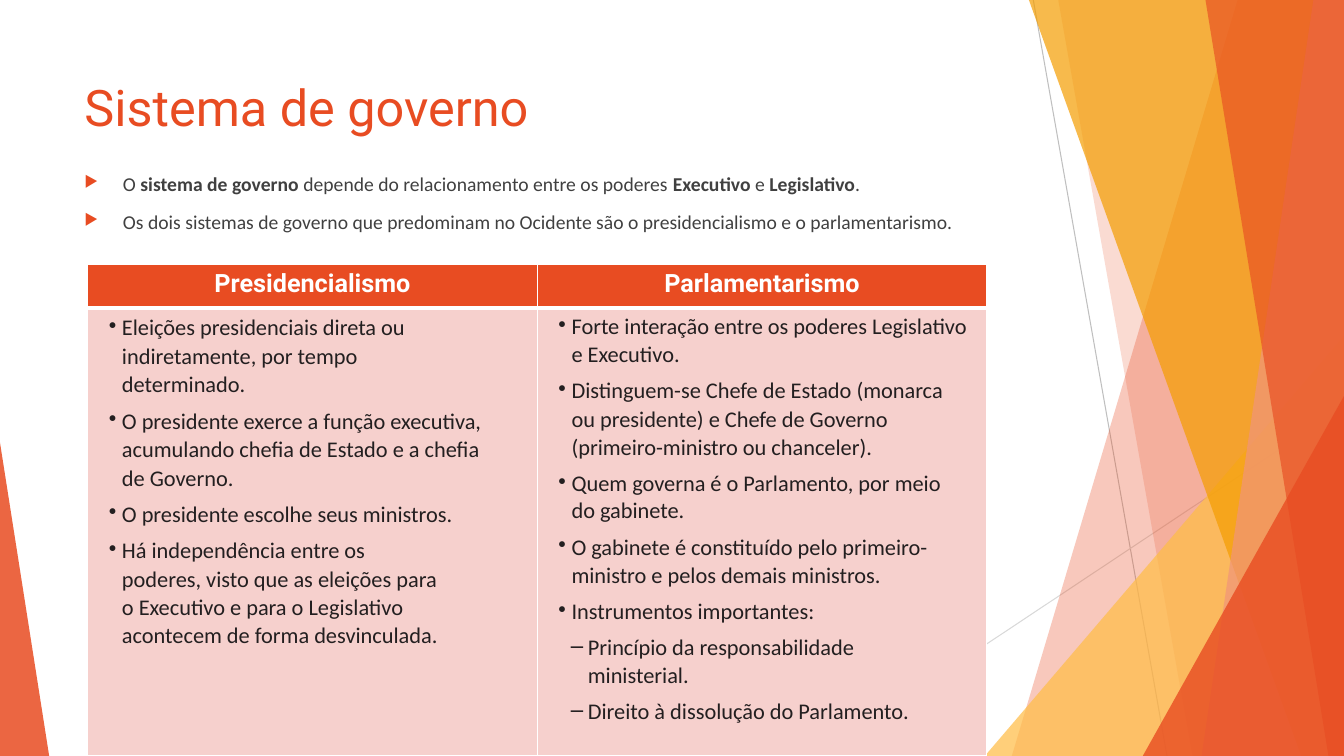
from dataclasses import dataclass

from lxml.etree import SubElement
from pptx import Presentation
from pptx.dml.color import RGBColor
from pptx.enum.shapes import MSO_CONNECTOR, MSO_SHAPE
from pptx.enum.text import MSO_ANCHOR, PP_ALIGN
from pptx.oxml import parse_xml
from pptx.oxml.ns import nsdecls, qn
from pptx.util import Cm, Pt

WIDTH, HEIGHT = 33.87, 19.05


@dataclass(frozen=True)
class Theme:
    accent: str = "E84C22"
    salmon: str = "F1947A"
    amber: str = "F49D00"
    yellow: str = "FFBD47"
    body: str = "404040"
    ink: str = "231F20"
    white: str = "FFFFFF"
    cell: str = "F6D0CD"
    heading_font: str = "Roboto"
    text_font: str = "Calibri"
    title_size: int = 36
    intro_size: int = 14
    header_size: int = 18
    cell_size: int = 16


THEME = Theme()


@dataclass(frozen=True)
class Ray:
    start: tuple[float, float]
    end: tuple[float, float]
    color: str


@dataclass(frozen=True)
class Band:
    """Full-height facet between a slanted left side and the right slide edge."""
    top_x: float
    bottom_x: float
    color: str
    opacity: int


@dataclass(frozen=True)
class Corner:
    """Right triangle standing on the bottom edge of the slide."""
    left: float
    top: float
    width: float
    apex: int
    color: str
    opacity: int


@dataclass(frozen=True)
class Item:
    text: str
    before: float
    leading: float = 1.0
    right: float = 0
    level: int = 0


@dataclass(frozen=True)
class Bullet:
    char: str
    margin: float
    hanging: float


INTRO_BULLET = Bullet("▶", 0.97, 0.97)
CELL_BULLETS = (Bullet("•", 0.61, 0.33), Bullet("–", 1.02, 0.43))

RAYS = (
    Ray((26.04, 0), (29.41, HEIGHT), "BFBFBF"),
    Ray((WIDTH, 10.24), (20.62, HEIGHT), "D9D9D9"),
)
FACETS = (
    Band(31.19, 25.5, THEME.accent, 30),
    Band(26.67, 30.05, THEME.accent, 20),
    Corner(24.82, 8.46, 9.05, 1, THEME.yellow, 72),
    Band(25.93, 32.79, THEME.amber, 70),
    Band(33.1, 30.28, THEME.salmon, 70),
    Band(30.38, 33.48, THEME.accent, 65),
    Corner(28.8, 9.98, 5.07, 1, THEME.accent, 80),
    Corner(0, 11.15, 1.24, 0, THEME.accent, 85),
)

# Double asterisks enclose bold words.
INTRO = (
    "O **sistema de governo **depende do relacionamento entre os poderes "
    "**Executivo** e **Legislativo**.",
    "Os dois sistemas de governo que predominam no Ocidente são o "
    "presidencialismo e o parlamentarismo.",
)
SYSTEMS = {
    "Presidencialismo": (
        Item("Eleições presidenciais direta ou indiretamente, por tempo determinado.",
             0, 1.04, 1.93),
        Item("O presidente exerce a função executiva, acumulando chefia de Estado "
             "e a chefia de Governo.", 5.7, 1.04, 0.89),
        Item("O presidente escolhe seus ministros.", 6.2),
        Item("Há independência entre os poderes, visto que as eleições para o "
             "Executivo e para o Legislativo acontecem de forma desvinculada.",
             5.7, 1.04, 2.08),
    ),
    "Parlamentarismo": (
        Item("Forte interação entre os poderes Legislativo e Executivo.", 0),
        Item("Distinguem-se Chefe de Estado (monarca ou presidente) e Chefe de "
             "Governo (primeiro-ministro ou chanceler).", 5.7, 1.04, 0.51),
        Item("Quem governa é o Parlamento, por meio do gabinete.", 6.2, right=0.51),
        Item("O gabinete é constituído pelo primeiro-ministro e pelos demais ministros.",
             5.7, 1.04),
        Item("Instrumentos importantes:", 6.2),
        Item("Princípio da responsabilidade ministerial.", 6.2, right=0.9, level=1),
        Item("Direito à dissolução do Parlamento.", 6.2, level=1),
    ),
}


def style(font, name: str, size: int, color: str, bold: bool = False) -> None:
    font.name, font.size, font.bold = name, Pt(size), bold
    font.color.rgb = RGBColor.from_string(color)


def paint(facet, color: str, opacity: int) -> None:
    facet.shadow.inherit = False
    facet.line.fill.background()
    facet.fill.solid()
    facet.fill.fore_color.rgb = RGBColor.from_string(color)
    srgb = facet.fill._xPr.find(f".//{qn('a:srgbClr')}")
    SubElement(srgb, qn("a:alpha"), val=str(opacity * 1000))


def draw_ray(shapes, ray: Ray) -> None:
    line = shapes.add_connector(MSO_CONNECTOR.STRAIGHT, *map(Cm, ray.start + ray.end))
    line.line.color.rgb = RGBColor.from_string(ray.color)
    line.line.width = Pt(0.75)
    SubElement(line._element.spPr, qn("a:effectLst"))


def draw_facet(shapes, facet: Band | Corner) -> None:
    if isinstance(facet, Band):
        outline = shapes.build_freeform(Cm(facet.top_x), 0)
        outline.add_line_segments([(Cm(x), Cm(y)) for x, y in (
            (WIDTH, 0), (WIDTH, HEIGHT), (facet.bottom_x, HEIGHT))])
        piece = outline.convert_to_shape()
    else:
        piece = shapes.add_shape(
            MSO_SHAPE.ISOSCELES_TRIANGLE, Cm(facet.left), Cm(facet.top),
            Cm(facet.width), Cm(HEIGHT - facet.top))
        piece.adjustments[0] = facet.apex
    paint(piece, facet.color, facet.opacity)


def add_bullet(paragraph, bullet: Bullet, right: float = 0, accent: bool = False) -> None:
    props = paragraph._p.get_or_add_pPr()
    props.set("marL", str(Cm(bullet.margin)))
    props.set("indent", str(-Cm(bullet.hanging)))
    if right:
        props.set("marR", str(Cm(right)))
    if accent:
        SubElement(SubElement(props, qn("a:buClr")), qn("a:srgbClr"), val=THEME.accent)
        SubElement(props, qn("a:buSzPct"), val="80000")
    SubElement(props, qn("a:buChar"), char=bullet.char)


def next_paragraph(frame, index: int):
    return frame.add_paragraph() if index else frame.paragraphs[0]


def add_text_frame(shapes, top: float, height: float):
    frame = shapes.add_textbox(Cm(1.88), Cm(top), Cm(23.88), Cm(height)).text_frame
    frame.word_wrap = True
    return frame


def write_intro(shapes) -> None:
    frame = add_text_frame(shapes, 4.22, 12.55)
    for index, sentence in enumerate(INTRO):
        paragraph = next_paragraph(frame, index)
        add_bullet(paragraph, INTRO_BULLET, accent=True)
        paragraph.space_before = Pt(10 if index else 0)
        style(paragraph.font, THEME.text_font, THEME.intro_size, THEME.body)
        for part, words in enumerate(sentence.split("**")):
            run = paragraph.add_run()
            run.text = words
            run.font.bold = part % 2 == 1


def finish_cell(cell, color: str, top: int, bottom: int) -> None:
    """Fill a cell and give it white borders; top and bottom are in points."""
    cell.fill.solid()
    cell.fill.fore_color.rgb = RGBColor.from_string(color)
    props = cell._tc.get_or_add_tcPr()
    for index, (side, width) in enumerate(zip("LRTB", (1, 1, top, bottom))):
        props.insert(index, parse_xml(
            f'<a:ln{side} {nsdecls("a")} w="{Pt(width)}"><a:solidFill>'
            f'<a:srgbClr val="{THEME.white}"/></a:solidFill></a:ln{side}>'))


def add_systems_table(shapes) -> None:
    table = shapes.add_table(
        2, len(SYSTEMS), Cm(2.21), Cm(6.65), Cm(22.66), Cm(12.4)).table
    table.rows[0].height, table.rows[1].height = Cm(1.12), Cm(11.28)
    for column, (system, items) in enumerate(SYSTEMS.items()):
        header, details = table.cell(0, column), table.cell(1, column)
        header.text = system
        heading = header.text_frame.paragraphs[0]
        heading.alignment = PP_ALIGN.CENTER
        style(heading.font, THEME.heading_font, THEME.header_size, THEME.white, True)
        finish_cell(header, THEME.accent, 1, 3)
        for index, item in enumerate(items):
            paragraph = next_paragraph(details.text_frame, index)
            paragraph.text, paragraph.level = item.text, item.level
            add_bullet(paragraph, CELL_BULLETS[item.level], item.right)
            paragraph.space_before = Pt(item.before)
            paragraph.line_spacing = item.leading
            style(paragraph.font, THEME.text_font, THEME.cell_size, THEME.ink)
        finish_cell(details, THEME.cell, 3, 1)


def main() -> None:
    deck = Presentation()
    deck.slide_width, deck.slide_height = Cm(WIDTH), Cm(HEIGHT)
    shapes = deck.slides.add_slide(deck.slide_layouts[6]).shapes
    for ray in RAYS:
        draw_ray(shapes, ray)
    for facet in FACETS:
        draw_facet(shapes, facet)
    title = add_text_frame(shapes, 1.7, 1.98)
    title.vertical_anchor = MSO_ANCHOR.MIDDLE
    title.text = "Sistema de governo"
    style(title.paragraphs[0].font, THEME.heading_font, THEME.title_size, THEME.accent)
    write_intro(shapes)
    add_systems_table(shapes)
    deck.save("out.pptx")


if __name__ == "__main__":
    main()
